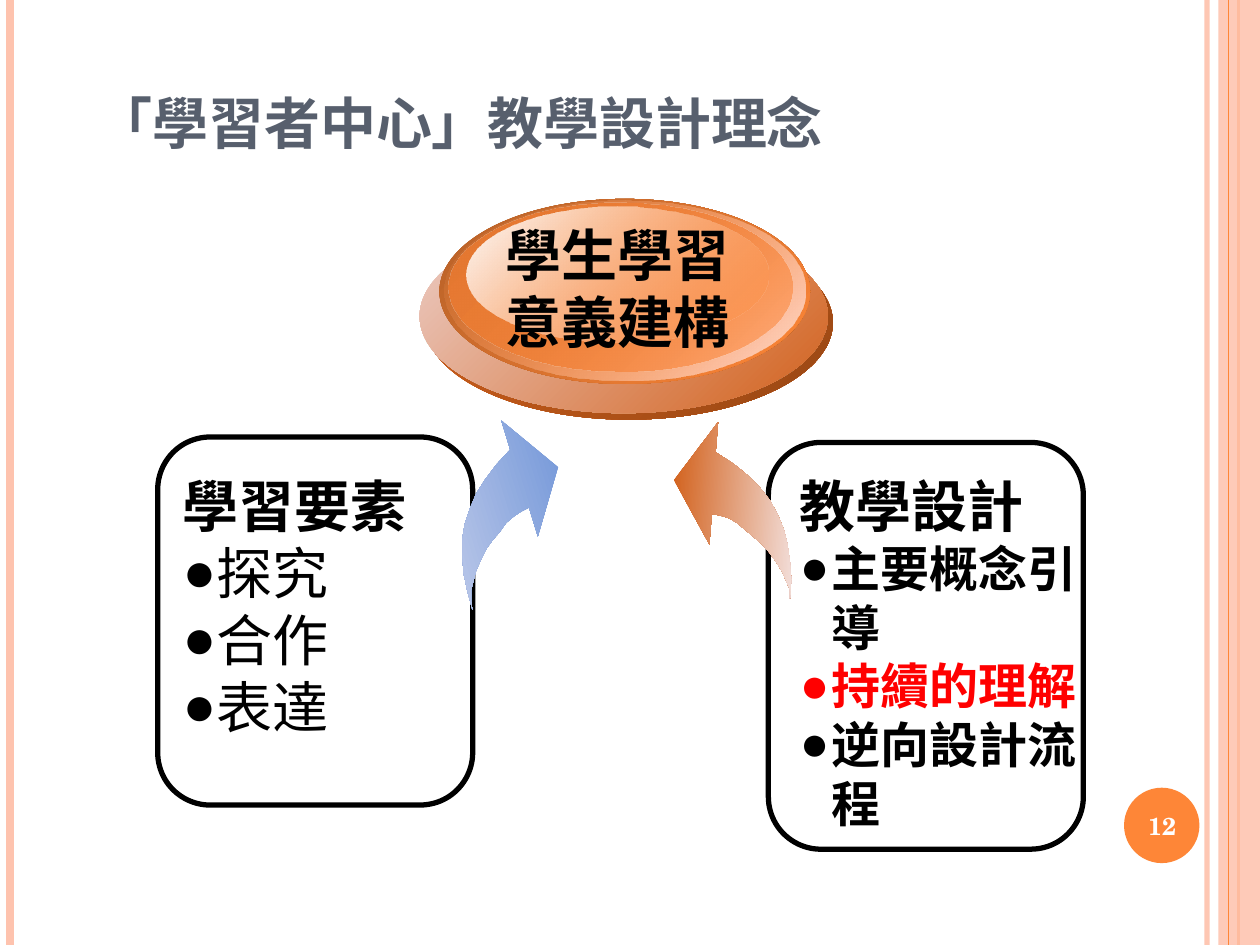
from collections import namedtuple

from lxml.etree import SubElement
from pptx import Presentation
from pptx.dml.color import RGBColor
from pptx.enum.shapes import MSO_CONNECTOR, MSO_SHAPE
from pptx.enum.text import MSO_ANCHOR, MSO_AUTO_SIZE, PP_ALIGN
from pptx.oxml.ns import qn
from pptx.util import Cm, Pt

Box = namedtuple("Box", "left top width height")

BLACK = RGBColor(0x00, 0x00, 0x00)
WHITE = RGBColor(0xFF, 0xFF, 0xFF)
RED = RGBColor(0xFF, 0x00, 0x00)
SLATE = RGBColor(0x57, 0x5F, 0x6D)
ORANGE = RGBColor(0xFE, 0x86, 0x37)
PEACH = RGBColor(0xFE, 0xC3, 0xAE)
PALE_PEACH = RGBColor(0xFF, 0xDE, 0xD5)
RUST = RGBColor(0xD2, 0x61, 0x1C)
DARK_RUST = RGBColor(0x99, 0x47, 0x14)
BROWN = RGBColor(0xB6, 0x60, 0x27)
BURNT = RGBColor(0xE6, 0x79, 0x32)
ROSE = RGBColor(0xEC, 0xCD, 0xC6)
PALE_ROSE = RGBColor(0xF2, 0xDD, 0xD8)
BLUE = RGBColor(0x75, 0x98, 0xD9)
PALE_BLUE = RGBColor(0xB8, 0xC6, 0xE8)

SERIF = "TeX Gyre Schola"
SANS = "Noto Sans CJK SC"
BULLET_INDENT = Cm(0.64)

LEFT_ARROW = [
    (8, 150), (4, 135), (1, 121), (0, 107), (0, 94), (2, 82), (6, 70), (11, 58),
    (18, 47), (27, 35), (38, 23), (31, 0), (76, 37), (60, 92), (53, 69), (47, 72),
    (41, 76), (35, 81), (30, 88), (24, 95), (19, 102), (15, 110), (11, 119),
    (9, 127), (7, 135), (7, 143)]
RIGHT_ARROW = [
    (92, 140), (93, 125), (92, 111), (90, 97), (87, 85), (82, 73), (76, 62),
    (68, 52), (58, 42), (47, 33), (33, 24), (35, 0), (0, 46), (28, 97), (30, 73),
    (36, 74), (43, 76), (50, 80), (56, 85), (63, 91), (70, 97), (76, 104),
    (81, 111), (86, 119), (89, 126), (92, 133)]


def place(part, box):
    part.left, part.top, part.width, part.height = map(Cm, box)


def set_alpha(color_parent, percent):
    color = next(color_parent.iter(qn("a:srgbClr")))
    SubElement(color, qn("a:alpha"), val=str(percent * 1000))


def fill_gradient(shape, stops, angle):
    properties = shape._element.spPr
    shape.fill.gradient()
    gradient = properties.find(qn("a:gradFill"))
    for child in list(gradient):
        gradient.remove(child)
    stop_list = SubElement(gradient, qn("a:gsLst"))
    for position, (color, alpha) in zip((0, 100000), stops):
        stop = SubElement(stop_list, qn("a:gs"), pos=str(position))
        SubElement(stop, qn("a:srgbClr"), val=str(color))
        set_alpha(stop, alpha)
    SubElement(gradient, qn("a:lin"), ang=str(round(angle * 60000)), scaled="0")
    shape.line.fill.background()
    shape.shadow.inherit = False


def style(paragraph, size, color, name=SANS, bold=True):
    font = paragraph.font
    font.size, font.bold, font.name = Pt(size), bold, name
    font.color.rgb = color
    defaults = paragraph._p.pPr.find(qn("a:defRPr"))
    SubElement(defaults, qn("a:ea"), typeface=SANS)
    return defaults


def set_bullet(paragraph, color=None):
    properties = paragraph._p.get_or_add_pPr()
    indent = BULLET_INDENT if color is not None else 0
    properties.set("marL", str(indent))
    properties.set("indent", str(-indent))
    if color is None:
        SubElement(properties, qn("a:buNone"))
        return
    bullet_color = SubElement(properties, qn("a:buClr"))
    SubElement(bullet_color, qn("a:srgbClr"), val=str(color))
    SubElement(properties, qn("a:buChar"), char="●")


def set_spacing(paragraph, size):
    paragraph.space_before = paragraph.space_after = Pt(0)
    paragraph.line_spacing = Pt(round(size * 1.2, 1))


def add_rails(slide, box):
    def rail(x, color, width, alpha=100):
        edge = slide.shapes.add_connector(
            MSO_CONNECTOR.STRAIGHT, Cm(box.left + x), Cm(box.top),
            Cm(box.left + x), Cm(box.top + box.height))
        edge.line.color.rgb = color
        edge.line.width = Pt(width)
        properties = edge._element.spPr
        set_alpha(properties, alpha)
        SubElement(properties, qn("a:effectLst"))

    rail(24.33, PEACH, 3, 93)
    rail(0.2, PEACH, 4.5)
    rail(24.97, ORANGE, 1.5)
    band = slide.shapes.add_shape(
        MSO_SHAPE.RECTANGLE, Cm(box.left + 24.56), Cm(box.top), Cm(0.84), Cm(box.height))
    band.fill.solid()
    band.fill.fore_color.rgb = PEACH
    set_alpha(band._element.spPr, 87)
    band.line.fill.background()
    band.shadow.inherit = False
    rail(24.77, ORANGE, 0.75)


def add_page_badge(slide, box, number):
    badge = slide.shapes.add_shape(MSO_SHAPE.OVAL, *map(Cm, box))
    badge.fill.solid()
    badge.fill.fore_color.rgb = ORANGE
    badge.line.fill.background()
    badge.shadow.inherit = False
    label = slide.shapes.add_textbox(
        Cm(box.left - 0.08), Cm(box.top + 0.05), Cm(1.7), Cm(1.45)).text_frame
    label.word_wrap = True
    label.vertical_anchor = MSO_ANCHOR.MIDDLE
    label.text = number
    label.paragraphs[0].alignment = PP_ALIGN.CENTER
    style(label.paragraphs[0], 14, WHITE, SERIF)


def set_title(slide, box, wording):
    title = slide.shapes.title
    place(title, box)
    frame = title.text_frame
    frame.text = wording
    frame.auto_size = MSO_AUTO_SIZE.NONE
    frame.vertical_anchor = MSO_ANCHOR.BOTTOM
    frame.paragraphs[0].alignment = PP_ALIGN.LEFT
    style(frame.paragraphs[0], 40, SLATE, SERIF).set("cap", "small")


def add_panel(slide, box, body, body_box, heading, items, size, bold):
    outline = slide.shapes.add_shape(MSO_SHAPE.ROUNDED_RECTANGLE, *map(Cm, box))
    outline.fill.background()
    outline.line.color.rgb = BLACK
    outline.line.width = Pt(3)
    outline.shadow.inherit = False
    place(body, Box(box.left + body_box.left, box.top + body_box.top,
                    body_box.width, body_box.height))
    frame = body.text_frame
    frame.text = "\n".join([heading] + [wording for wording, _ in items])
    frame.auto_size = MSO_AUTO_SIZE.NONE
    title, *points = frame.paragraphs
    set_bullet(title)
    set_spacing(title, 32)
    style(title, 32, BLACK)
    for point, (_, color) in zip(points, items):
        set_bullet(point, color)
        set_spacing(point, size)
        style(point, size, color, bold=bold)


def add_emblem(slide, box, lines):
    layers = [
        (Box(0.1, 0.54, 8.23, 3.91), (RUST, 100), (DARK_RUST, 100)),
        (Box(0, 0.41, 8.23, 3.91), (ROSE, 100), (RUST, 100)),
        (Box(0.4, 0, 7.47, 3.73), (BROWN, 100), (ORANGE, 100)),
        (Box(0.51, 0.03, 7.26, 3.63), (ORANGE, 0), (PALE_PEACH, 100)),
        (Box(0.58, 0.08, 6.93, 3.4), (BURNT, 100), (ORANGE, 48)),
        (Box(0.94, 0.16, 6.1, 2.74), (WHITE, 100), (ORANGE, 38))]
    for layer, *stops in layers:
        disc = slide.shapes.add_shape(
            MSO_SHAPE.OVAL, Cm(box.left + layer.left), Cm(box.top + layer.top),
            Cm(layer.width), Cm(layer.height))
        fill_gradient(disc, stops, 45)
    caption = slide.shapes.add_textbox(
        Cm(box.left + 1.45), Cm(box.top + 0.31), Cm(5.08), Cm(3)).text_frame
    caption.word_wrap = False
    caption.text = "\n".join(lines)
    for line in caption.paragraphs:
        line.alignment = PP_ALIGN.CENTER
        set_spacing(line, 32)
        style(line, 32, BLACK)


def add_arrow(slide, left, top, points, colors, angle):
    builder = slide.shapes.build_freeform(*points[0], scale=Cm(0.0254))
    builder.add_line_segments(points[1:], close=True)
    arrow = builder.convert_to_shape(Cm(left), Cm(top))
    fill_gradient(arrow, [(color, 100) for color in colors], angle)


def main():
    deck = Presentation()
    deck.slide_width, deck.slide_height = Cm(25.4), Cm(19.05)
    slide = deck.slides.add_slide(deck.slide_layouts[3])
    elements, design = slide.placeholders[1], slide.placeholders[2]

    add_rails(slide, Box(0, 0, 25.4, 19.05))
    add_page_badge(slide, Box(22.66, 15.88, 1.52, 1.52), "12")
    set_title(slide, Box(1.7, 0.74, 20.55, 2.59), "「學習者中心」教學設計理念")
    add_panel(slide, Box(3.18, 8.81, 6.35, 7.42), elements, Box(0.25, 0.56, 5.66, 7.7),
              "學習要素", [("探究", BLACK), ("合作", BLACK), ("表達", BLACK)], 32, False)
    add_arrow(slide, 9.32, 8.48, LEFT_ARROW, (BLUE, PALE_BLUE), 162.7)
    add_emblem(slide, Box(8.46, 4.01, 8.33, 4.45), ["學生學習", "意義建構"])
    add_panel(slide, Box(15.49, 8.92, 6.35, 8.2), design, Box(0.38, 0.45, 6.22, 8.97),
              "教學設計", [("主要概念引導", BLACK), ("持續的理解", RED),
                       ("逆向設計流程", BLACK)], 28, True)
    add_arrow(slide, 13.59, 8.51, RIGHT_ARROW, (RUST, PALE_ROSE), 4)
    deck.save("out.pptx")


if __name__ == "__main__":
    main()
